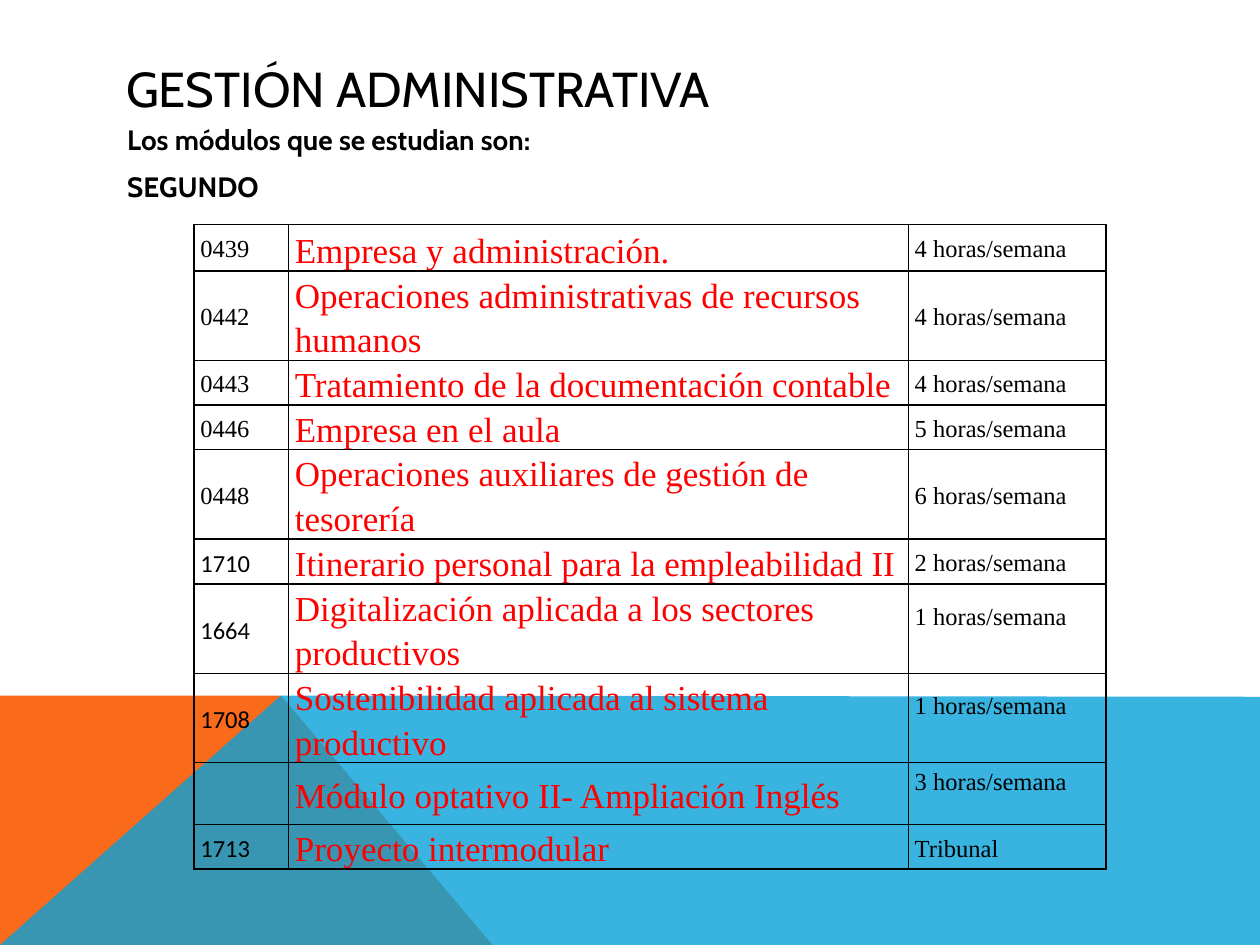
"""Build the slide listing the second-year modules of Gestión Administrativa."""
import dataclasses

import lxml.etree
import pptx
import pptx.dml.color
import pptx.enum.text
import pptx.oxml.ns
import pptx.util

Inches = pptx.util.Inches
Pt = pptx.util.Pt


@dataclasses.dataclass(frozen=True)
class Theme:
    """Colours, fonts and type sizes of the slide."""

    text: str = "000000"
    module: str = "FF0000"
    orange: str = "F96A1B"
    blue: str = "08A1D9"
    heading_font: str = "Cabin"
    table_font: str = "Times New Roman"
    code_font: str = "Calibri"
    title_size: int = 28
    body_size: int = 16
    module_size: int = 20
    detail_size: int = 14


THEME = Theme()
COLUMN_WIDTHS = (0.75, 4.92, 1.57)
SECOND_LINE_SPACE = 0.22
MODULES = (
    ("0439", "Empresa y administración.", "4 horas/semana", 0.37),
    ("0442", "Operaciones administrativas de recursos humanos", "4 horas/semana", 0.71),
    ("0443", "Tratamiento de la documentación contable", "4 horas/semana", 0.35),
    ("0446", "Empresa en el aula", "5 horas/semana", 0.35),
    ("0448", "Operaciones auxiliares de gestión de tesorería", "6 horas/semana", 0.71),
    ("1710", "Itinerario personal para la empleabilidad II", "2 horas/semana", 0.35),
    ("1664", "Digitalización aplicada a los sectores productivos", "1 horas/semana", 0.71),
    ("1708", "Sostenibilidad aplicada al sistema productivo", "1 horas/semana", 0.71),
    ("", "Módulo optativo II- Ampliación Inglés", "3 horas/semana", 0.49),
    ("1713", "Proyecto intermodular", "Tribunal", 0.35),
)
RAISED_HOURS = {"1 horas/semana", "3 horas/semana"}


def add_element(parent, tag, **attributes):
    """Append a DrawingML element and return it."""
    return lxml.etree.SubElement(parent, pptx.oxml.ns.qn(tag), attributes)


def write_text(paragraph, text, *, size, font, color=THEME.text, bold=False,
               line_spacing=None, space_before=0, space_after=0):
    """Write formatted text into a paragraph."""
    paragraph.alignment = pptx.enum.text.PP_ALIGN.LEFT
    paragraph.space_before = Pt(space_before)
    paragraph.space_after = Pt(space_after)
    if line_spacing:
        paragraph.line_spacing = line_spacing
    run = paragraph.add_run()
    run.text = text
    run.font.size = Pt(size)
    run.font.name = font
    run.font.bold = bold
    run.font.color.rgb = pptx.dml.color.RGBColor.from_string(color)


def place(shape, left, top, width, height):
    """Move and size a shape, in inches."""
    shape.left, shape.top = Inches(left), Inches(top)
    shape.width, shape.height = Inches(width), Inches(height)


def add_band(slide, points, color, opacity=None):
    """Add a filled polygon through points given in inches."""
    corners = [(Inches(x), Inches(y)) for x, y in points]
    builder = slide.shapes.build_freeform(*corners[0])
    builder.add_line_segments(corners[1:], close=True)
    shape = builder.convert_to_shape()
    shape.shadow.inherit = False
    shape.line.fill.background()
    shape.fill.solid()
    shape.fill.fore_color.rgb = pptx.dml.color.RGBColor.from_string(color)
    if opacity:
        fill_color = shape.element.xpath("./p:spPr/a:solidFill/a:srgbClr")[0]
        add_element(fill_color, "a:alpha", val=str(opacity * 1000))


def fill_title(shape, text):
    """Place and write the title."""
    place(shape, 0.9, 0.4, 8.22, 0.6)
    shape.text_frame.vertical_anchor = pptx.enum.text.MSO_ANCHOR.MIDDLE
    write_text(shape.text_frame.paragraphs[0], text,
               size=THEME.title_size, font=THEME.heading_font)


def fill_body(shape, lines):
    """Place the body and write its lines without bullets."""
    place(shape, 0.91, 0.92, 8.22, 3.91)
    frame = shape.text_frame
    for index, line in enumerate(lines):
        paragraph = frame.add_paragraph() if index else frame.paragraphs[0]
        properties = paragraph._p.get_or_add_pPr()
        properties.set("marL", str(Inches(0.38)))
        properties.set("indent", str(Inches(-0.38)))
        add_element(properties, "a:buNone")
        write_text(paragraph, line, size=THEME.body_size, font=THEME.heading_font,
                   bold=True, space_before=8 if index else 0)


def format_cell(cell):
    """Give a cell its margins, black borders and clear fill."""
    cell.vertical_anchor = pptx.enum.text.MSO_ANCHOR.MIDDLE
    cell.margin_left = cell.margin_right = Inches(0.05)
    cell.margin_top = cell.margin_bottom = 0
    cell.fill.background()
    properties = cell._tc.get_or_add_tcPr()
    for index, side in enumerate("LRTB"):
        border = add_element(properties, f"a:ln{side}", w=str(Pt(1)))
        add_element(add_element(border, "a:solidFill"), "a:srgbClr", val=THEME.text)
        properties.insert(index, border)


def add_module_table(slide):
    """Add the table of module codes, names and weekly hours."""
    frame = slide.shapes.add_table(
        len(MODULES), len(COLUMN_WIDTHS), Inches(1.54), Inches(1.78),
        Inches(sum(COLUMN_WIDTHS)), Inches(sum(module[-1] for module in MODULES)))
    table = frame.table
    table.first_row = table.horz_banding = False
    for column, width in zip(table.columns, COLUMN_WIDTHS):
        column.width = Inches(width)
    for index, (code, name, hours, height) in enumerate(MODULES):
        table.rows[index].height = Inches(height)
        cells = table.rows[index].cells
        for cell in cells:
            format_cell(cell)
        code_cell, name_cell, hours_cell = (
            cell.text_frame.paragraphs[0] for cell in cells)
        if code:
            code_font = THEME.code_font if code.startswith("1") else THEME.table_font
            write_text(code_cell, code, size=THEME.detail_size, font=code_font,
                       line_spacing=1.15, space_after=10)
        write_text(name_cell, name, size=THEME.module_size, font=THEME.table_font,
                   color=THEME.module, line_spacing=1.15 if index else 1.2,
                   space_after=10 if index else 0)
        write_text(hours_cell, hours, size=THEME.detail_size, font=THEME.table_font,
                   line_spacing=1.15)
        if hours in RAISED_HOURS:
            cells[2].margin_bottom = Inches(SECOND_LINE_SPACE)


def main():
    """Build and save the presentation."""
    presentation = pptx.Presentation()
    presentation.slide_width, presentation.slide_height = Inches(10), Inches(7.5)
    slide = presentation.slides.add_slide(presentation.slide_layouts[1])
    add_band(slide, [(0, 7.5), (0, 5.52), (2.23, 5.52), (3.91, 7.5)], THEME.orange)
    add_band(slide, [(0, 7.5), (2.23, 5.52), (10, 5.53), (10, 7.5)], THEME.blue, 80)
    fill_title(slide.shapes.title, "GESTIÓN ADMINISTRATIVA")
    fill_body(slide.placeholders[1], ["Los módulos que se estudian son:", "SEGUNDO"])
    add_module_table(slide)
    presentation.save("out.pptx")


if __name__ == "__main__":
    main()
